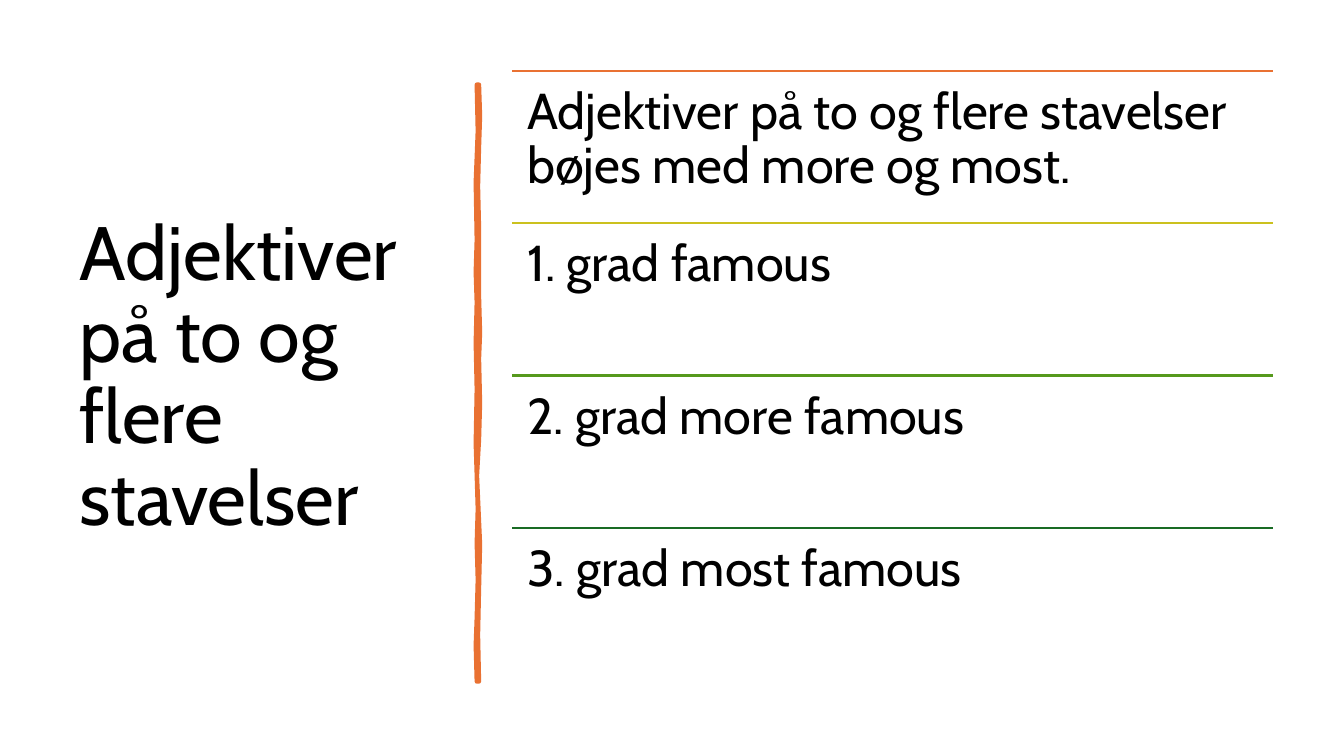
from dataclasses import dataclass

from lxml import etree
from pptx import Presentation
from pptx import util as u
from pptx.dml.color import RGBColor
from pptx.enum import shapes, text
from pptx.oxml import ns
from pptx.slide import Slide
from pptx.text.text import TextFrame

BLACK = RGBColor(0x00, 0x00, 0x00)
ORANGE = RGBColor(0xE9, 0x71, 0x32)
YELLOW = RGBColor(0xCB, 0xC1, 0x1E)
LIME = RGBColor(0x56, 0x99, 0x1D)
GREEN = RGBColor(0x19, 0x6B, 0x24)

FONT = "Cabin"
LIST_LEFT, LIST_TOP, LIST_WIDTH = 5.08, 0.7, 7.55
ROW_HEIGHT = 6.05 / 4


@dataclass
class Row:
    label: str
    color: RGBColor


ROWS = [
    Row("Adjektiver på to og flere stavelser bøjes med more og most.", ORANGE),
    Row("1. grad famous", YELLOW),
    Row("2. grad more famous", LIME),
    Row("3. grad most famous", GREEN),
]

# Hand-drawn divider: down the right edge, up the left edge
DIVIDER = [
    (4.75, 0.84), (4.76, 1.15), (4.75, 1.46), (4.74, 1.85), (4.75, 2.26),
    (4.75, 2.94), (4.76, 3.3), (4.75, 3.56), (4.76, 4), (4.75, 4.36),
    (4.73, 4.72), (4.76, 5.4), (4.75, 5.84), (4.74, 6.3), (4.75, 6.76),
    (4.73, 6.76), (4.72, 6.4), (4.73, 6.13), (4.74, 5.75), (4.73, 5.39),
    (4.74, 5.05), (4.73, 4.71), (4.72, 4.4), (4.73, 3.86), (4.72, 3.4),
    (4.73, 3), (4.72, 2.7), (4.73, 2.38), (4.72, 1.81), (4.74, 1.3),
    (4.73, 0.84),
]


def write(tf: TextFrame, content: str, *, size: float, inset: float,
          anchor: text.MSO_ANCHOR) -> None:
    """Fill a text frame with one formatted paragraph."""
    tf.word_wrap = True
    tf.auto_size = text.MSO_AUTO_SIZE.NONE
    tf.vertical_anchor = anchor
    tf.margin_left = tf.margin_right = u.Inches(inset)
    tf.margin_top = tf.margin_bottom = u.Inches(inset)
    p = tf.paragraphs[0]
    p.alignment = text.PP_ALIGN.LEFT
    p.line_spacing = 0.9
    r = p.add_run()
    r.text = content
    r.font.name = FONT
    r.font.size = u.Pt(size)
    r.font.color.rgb = BLACK


def add_title(s: Slide) -> None:
    sp = s.shapes.title
    sp.left, sp.top = u.Inches(0.69), u.Inches(0.7)
    sp.width, sp.height = u.Inches(3.74), u.Inches(6.11)
    write(sp.text_frame, "Adjektiver på to og flere stavelser",
          size=54, inset=0.1, anchor=text.MSO_ANCHOR.MIDDLE)


def add_divider(s: Slide) -> None:
    points = [(u.Inches(x), u.Inches(y)) for x, y in DIVIDER]
    builder = s.shapes.build_freeform(*points[0])
    builder.add_line_segments(points[1:], close=True)
    sp = builder.convert_to_shape()
    sp.shadow.inherit = False
    sp.fill.solid()
    sp.fill.fore_color.rgb = ORANGE
    sp.line.color.rgb = ORANGE
    sp.line.width = u.Pt(3.25)


def add_row(s: Slide, row: Row, top: float) -> None:
    left, y, width = u.Inches(LIST_LEFT), u.Inches(top), u.Inches(LIST_WIDTH)
    rule = s.shapes.add_connector(
        shapes.MSO_CONNECTOR.STRAIGHT, left, y, left + width, y)
    rule.line.color.rgb = row.color
    rule.line.width = u.Pt(1.5)
    etree.SubElement(rule._element.spPr, ns.qn("a:effectLst"))
    box = s.shapes.add_textbox(left, y, width, u.Inches(ROW_HEIGHT))
    write(box.text_frame, row.label, size=36, inset=0.15,
          anchor=text.MSO_ANCHOR.TOP)


def main() -> None:
    prs = Presentation()
    prs.slide_width, prs.slide_height = u.Inches(13.33), u.Inches(7.5)
    s = prs.slides.add_slide(prs.slide_layouts[5])
    add_title(s)
    add_divider(s)
    for i, row in enumerate(ROWS):
        add_row(s, row, LIST_TOP + i * ROW_HEIGHT)
    prs.save("out.pptx")


if __name__ == "__main__":
    main()
